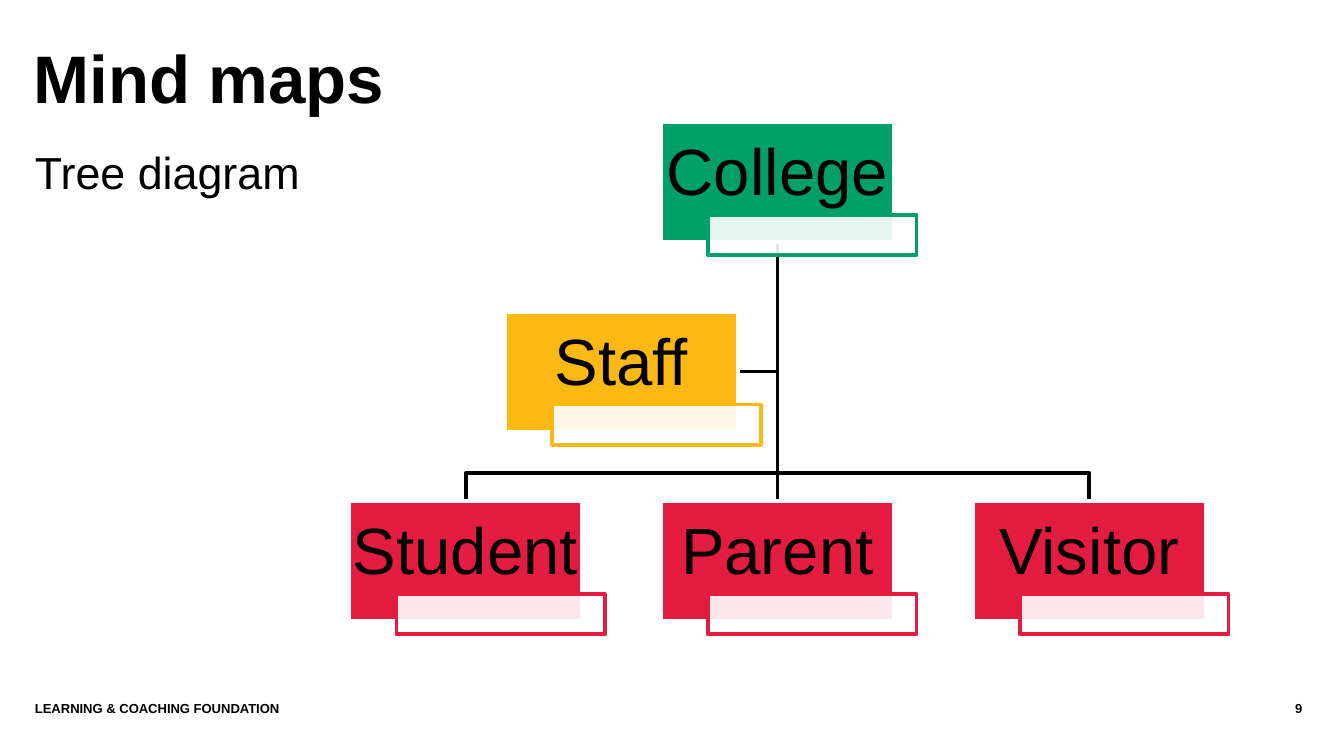
from dataclasses import dataclass

from lxml import etree
from pptx import Presentation
from pptx.dml.color import RGBColor
from pptx.enum.shapes import MSO_CONNECTOR, MSO_SHAPE
from pptx.enum.text import MSO_ANCHOR, MSO_AUTO_SIZE, PP_ALIGN
from pptx.oxml.ns import qn
from pptx.shapes.base import BaseShape
from pptx.slide import Slide
from pptx.text.text import TextFrame
from pptx.util import Inches, Pt

LEFT, CENTER, RIGHT = PP_ALIGN.LEFT, PP_ALIGN.CENTER, PP_ALIGN.RIGHT
TOP, MIDDLE = MSO_ANCHOR.TOP, MSO_ANCHOR.MIDDLE
RECTANGLE = MSO_SHAPE.RECTANGLE
STRAIGHT = MSO_CONNECTOR.STRAIGHT


@dataclass(frozen=True)
class Theme:
    font: str = "Arial"
    ink: str = "000000"
    paper: str = "FFFFFF"
    green: str = "00A068"
    amber: str = "FDB913"
    red: str = "E51C41"
    title_size: int = 36
    subtitle_size: int = 24
    node_size: int = 35
    footer_size: int = 7
    line_width: int = 2


@dataclass(frozen=True)
class Node:
    label: str
    left: float
    top: float
    color: str

    @property
    def center_x(self) -> float:
        return self.left + NODE_WIDTH / 2


THEME = Theme()

# Tree grid, in inches
NODE_WIDTH, NODE_HEIGHT = 1.73, 0.89
TAG_WIDTH, TAG_HEIGHT = 1.55, 0.3
TAG_DX, TAG_DY = 0.35, 0.69
FIRST_LEFT, COLUMN_STEP = 2.6, 2.32
FIRST_TOP, ROW_STEP = 0.91, 1.41
BRANCH_DROP = 0.21


def grid_node(label: str, column: float, row: int, color: str) -> Node:
    return Node(label, FIRST_LEFT + column * COLUMN_STEP,
                FIRST_TOP + row * ROW_STEP, color)


COLLEGE = grid_node("College", 1, 0, THEME.green)
STAFF = grid_node("Staff", 0.5, 1, THEME.amber)
STUDENT, PARENT, VISITOR = (
    grid_node(label, column, 2, THEME.red)
    for column, label in enumerate(("Student", "Parent", "Visitor"))
)


def write_text(frame: TextFrame, text: str, size: int, bold: bool = False,
               align: PP_ALIGN = LEFT, anchor: MSO_ANCHOR = TOP,
               insets: tuple[float, float, float, float] = (0, 0, 0, 0)) -> None:
    frame.word_wrap = True
    frame.auto_size = MSO_AUTO_SIZE.NONE
    frame.vertical_anchor = anchor
    (frame.margin_left, frame.margin_top,
     frame.margin_right, frame.margin_bottom) = map(Inches, insets)
    paragraph = frame.paragraphs[0]
    paragraph.alignment = align
    run = paragraph.add_run()
    run.text = text
    run.font.name = THEME.font
    run.font.size = Pt(size)
    run.font.bold = bold
    run.font.color.rgb = RGBColor.from_string(THEME.ink)


def add_text(slide: Slide, box: tuple[float, float, float, float], text: str,
             size: int, bold: bool = False, align: PP_ALIGN = LEFT) -> None:
    frame = slide.shapes.add_textbox(*map(Inches, box)).text_frame
    write_text(frame, text, size, bold, align)


def style_line(shape: BaseShape, color: str) -> None:
    shape.line.color.rgb = RGBColor.from_string(color)
    shape.line.width = Pt(THEME.line_width)


def add_box(slide: Slide, left: float, top: float, width: float, height: float,
            fill: str, line: str) -> BaseShape:
    box = slide.shapes.add_shape(RECTANGLE, *map(Inches, (left, top, width, height)))
    box.shadow.inherit = False
    box.fill.solid()
    box.fill.fore_color.rgb = RGBColor.from_string(fill)
    style_line(box, line)
    return box


def add_node(slide: Slide, node: Node) -> None:
    card = add_box(slide, node.left, node.top, NODE_WIDTH, NODE_HEIGHT,
                   node.color, THEME.paper)
    write_text(card.text_frame, node.label, THEME.node_size, align=CENTER,
               anchor=MIDDLE, insets=(0.02, 0.02, 0.02, 0.13))
    card.text_frame.paragraphs[0].line_spacing = 0.9

    # Nearly opaque tag over the lower right corner
    tag = add_box(slide, node.left + TAG_DX, node.top + TAG_DY,
                  TAG_WIDTH, TAG_HEIGHT, THEME.paper, node.color)
    fill_color = tag._element.spPr.find(qn("a:solidFill"))[0]
    etree.SubElement(fill_color, qn("a:alpha")).set("val", "90000")


def add_branch(slide: Slide, *points: tuple[float, float]) -> None:
    start, *corners = [(Inches(x), Inches(y)) for x, y in points]
    if len(corners) == 1:
        branch = slide.shapes.add_connector(STRAIGHT, *start, *corners[0])
        etree.SubElement(branch._element.spPr, qn("a:effectLst"))
    else:
        builder = slide.shapes.build_freeform(*start)
        builder.add_line_segments(corners, close=False)
        branch = builder.convert_to_shape()
        branch.shadow.inherit = False
        branch.fill.background()
    style_line(branch, THEME.ink)


def add_tree(slide: Slide) -> None:
    trunk_x, trunk_top = COLLEGE.center_x, COLLEGE.top + NODE_HEIGHT
    trunk = (trunk_x, trunk_top)

    # Branches go behind the nodes
    staff_y = STAFF.top + NODE_HEIGHT / 2
    add_branch(slide, trunk, (trunk_x, staff_y), (STAFF.left + NODE_WIDTH, staff_y))
    for child in (VISITOR, STUDENT):
        bend_y = child.top - BRANCH_DROP
        add_branch(slide, trunk, (trunk_x, bend_y), (child.center_x, bend_y),
                   (child.center_x, child.top))
    add_branch(slide, trunk, (trunk_x, PARENT.top))

    for node in (COLLEGE, STUDENT, PARENT, VISITOR, STAFF):
        add_node(slide, node)


def main() -> None:
    deck = Presentation()
    # Widescreen, 16:9
    deck.slide_width = Inches(10)
    deck.slide_height = Inches(10 * 9 / 16)
    slide = deck.slides.add_slide(deck.slide_layouts[5])

    # Heading
    title = slide.shapes.title
    title.left, title.top, title.width, title.height = map(
        Inches, (0.25, 0.27, 9.23, 0.76))
    write_text(title.text_frame, "Mind maps", THEME.title_size, bold=True)
    add_text(slide, (0.26, 1.08, 8.39, 3.94), "Tree diagram", THEME.subtitle_size)

    # Footer
    add_text(slide, (0.26, 5.21, 8.41, 0.3), "LEARNING & COACHING FOUNDATION",
             THEME.footer_size, bold=True)
    add_text(slide, (8.7, 5.21, 0.99, 0.3), "9", THEME.footer_size,
             bold=True, align=RIGHT)

    add_tree(slide)
    deck.save("out.pptx")


if __name__ == "__main__":
    main()
